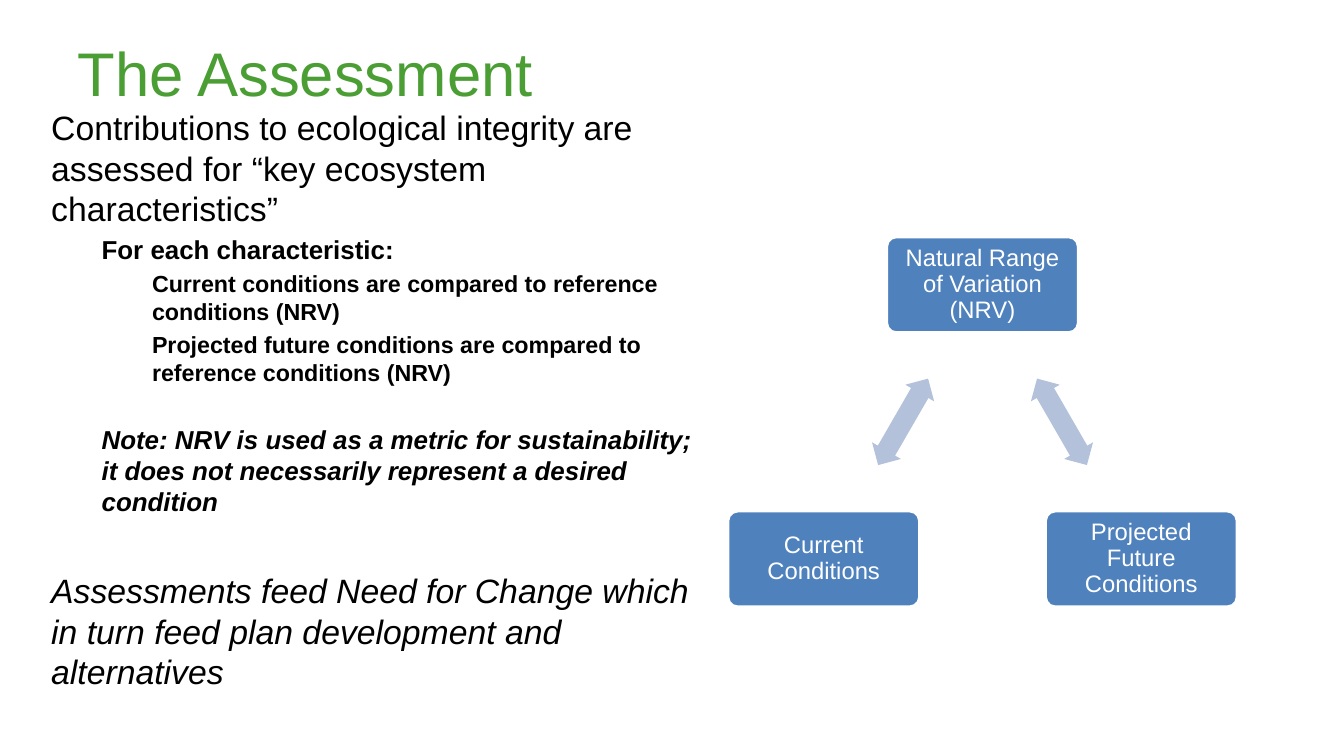
from pptx import Presentation
from pptx import util as u
from pptx.dml.color import RGBColor
from pptx.enum import shapes, text

COLORS = {"title": "4A9E33", "body": "000000", "node": "4F81BD",
          "arrow": "B3C1DB", "white": "FFFFFF"}
FONT = "Arial"
LEVEL_SIZES = (24.1, 18.5, 16.6)
LEVEL_INDENT = 0.5

# text, level, bold, italic, space before in points
BODY = [
    ("Contributions to ecological integrity are assessed for “key ecosystem characteristics”",
     0, False, False, 0),
    ("For each characteristic:", 1, True, False, 3.7),
    ("Current conditions are compared to reference conditions (NRV)", 2, True, False, 3.3),
    ("Projected future conditions are compared to reference conditions (NRV)",
     2, True, False, 3.3),
    ("Note: NRV is used as a metric for sustainability; it does not necessarily "
     "represent a desired condition", 1, True, True, 27),
    ("Assessments feed Need for Change which in turn feed plan development and alternatives",
     0, False, True, 38),
]


def rgb(name):
    return RGBColor.from_string(COLORS[name])


def format_font(paragraph, size, color, bold=False, italic=False):
    for run in paragraph.runs:
        font = run.font
        font.name, font.size, font.bold, font.italic = FONT, u.Pt(size), bold, italic
        font.color.rgb = rgb(color)


def add_text_box(slide, box, anchor):
    frame = slide.shapes.add_textbox(*map(u.Inches, box)).text_frame
    frame.word_wrap = True
    frame.vertical_anchor = anchor
    return frame


def add_title(slide, box):
    frame = add_text_box(slide, box, text.MSO_ANCHOR.TOP)
    frame.text = "The Assessment"
    format_font(frame.paragraphs[0], 44, "title")


def add_body(slide, box):
    frame = add_text_box(slide, box, text.MSO_ANCHOR.BOTTOM)
    for index, (words, level, bold, italic, space) in enumerate(BODY):
        paragraph = frame.add_paragraph() if index else frame.paragraphs[0]
        paragraph.text = words
        paragraph.level = level
        paragraph.line_spacing = 1.0
        paragraph.space_before = u.Pt(space)
        properties = paragraph._p.get_or_add_pPr()
        properties.set("marL", str(u.Inches(level * LEVEL_INDENT)))
        properties.set("indent", "0")
        format_font(paragraph, LEVEL_SIZES[level], "body", bold, italic)


def add_centered_shape(slide, kind, center, size, fill):
    (x, y), (width, height) = center, size
    box = (x - width / 2, y - height / 2, width, height)
    shape = slide.shapes.add_shape(kind, *map(u.Inches, box))
    shape.shadow.inherit = False
    shape.fill.solid()
    shape.fill.fore_color.rgb = rgb(fill)
    return shape


def add_node(slide, label, center, size):
    node = add_centered_shape(slide, shapes.MSO_SHAPE.ROUNDED_RECTANGLE, center, size, "node")
    node.adjustments[0] = 0.1
    node.line.color.rgb = rgb("white")
    node.line.width = u.Pt(2)
    frame = node.text_frame
    frame.word_wrap = True
    frame.vertical_anchor = text.MSO_ANCHOR.MIDDLE
    frame.margin_left = frame.margin_right = u.Inches(0.07)
    frame.margin_top = frame.margin_bottom = u.Inches(0.07)
    frame.text = label
    paragraph = frame.paragraphs[0]
    paragraph.alignment = text.PP_ALIGN.CENTER
    paragraph.line_spacing = 0.9
    format_font(paragraph, 17, "white")


def add_arrow(slide, start, end, rotation):
    """Place a double arrow halfway between two node centres."""
    center = ((start[0] + end[0]) / 2, (start[1] + end[1]) / 2)
    arrow = add_centered_shape(slide, shapes.MSO_SHAPE.LEFT_RIGHT_ARROW, center,
                               (0.99, 0.33), "arrow")
    arrow.adjustments[0], arrow.adjustments[1] = 0.6, 0.5
    arrow.line.fill.background()
    arrow.rotation = rotation


def add_comparison_diagram(slide, box):
    """Draw a triangle of nodes: one at the top, two at the bottom corners."""
    left, top, width, height = box
    node_size = (1.9, 0.95)
    half_width, half_height = (side / 2 for side in node_size)
    apex = (left + width / 2, top + half_height)
    base_y = top + height - half_height
    current = (left + half_width, base_y)
    projected = (left + width - half_width, base_y)
    add_node(slide, "Natural Range of Variation (NRV)", apex, node_size)
    add_arrow(slide, apex, projected, 60)
    add_node(slide, "Projected Future Conditions", projected, node_size)
    add_node(slide, "Current Conditions", current, node_size)
    add_arrow(slide, apex, current, 300)


def main():
    presentation = Presentation()
    presentation.slide_width, presentation.slide_height = u.Inches(13.33), u.Inches(7.5)
    slide = presentation.slides.add_slide(presentation.slide_layouts[6])
    add_title(slide, (0.67, 0.3, 11, 1.25))
    add_body(slide, (0.41, 1.38, 6.66, 5.53))
    add_comparison_diagram(slide, (7.22, 2.35, 5.05, 3.67))
    presentation.save("out.pptx")


if __name__ == "__main__":
    main()
